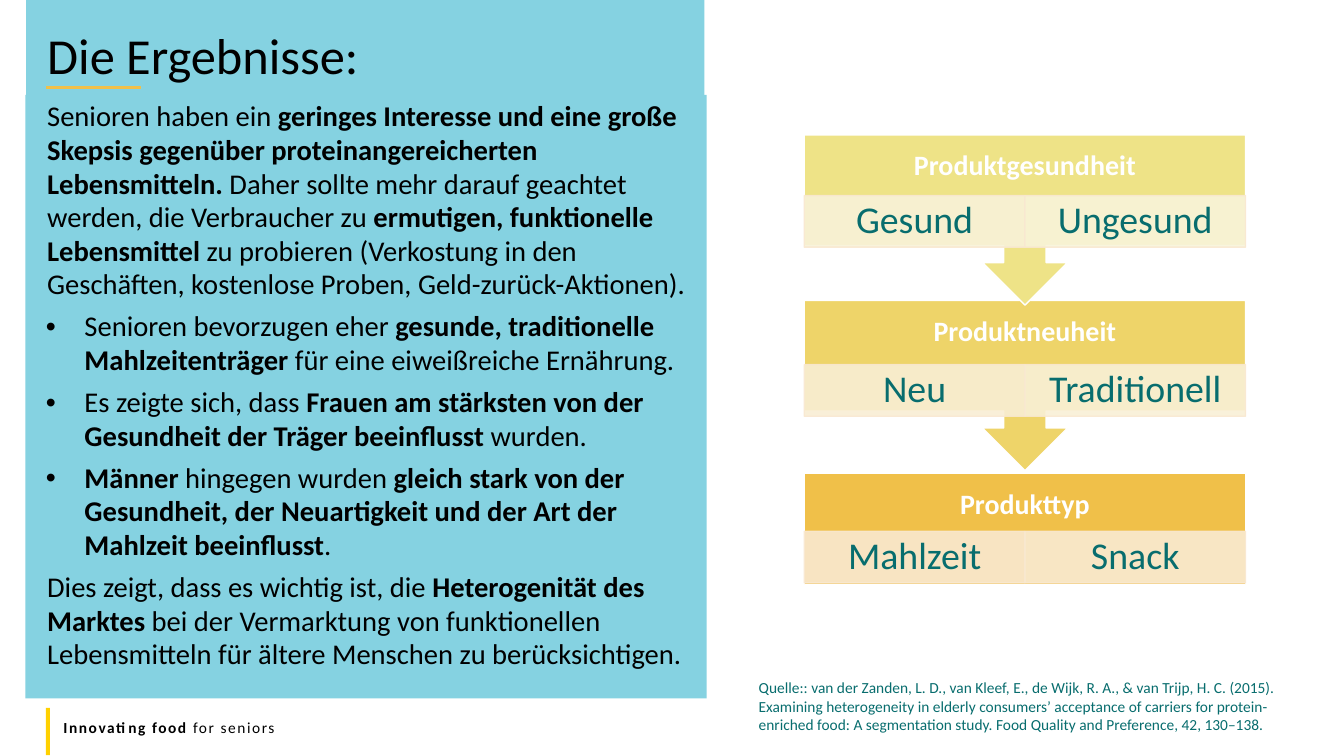
from lxml import etree
from pptx import Presentation
from pptx import util as u
from pptx.dml.color import RGBColor
from pptx.enum import shapes, text
from pptx.oxml.ns import qn

Cm, Pt = u.Cm, u.Pt
LEFT, CENTER = text.PP_ALIGN.LEFT, text.PP_ALIGN.CENTER
TOP, MIDDLE = text.MSO_ANCHOR.TOP, text.MSO_ANCHOR.MIDDLE
RECT = shapes.MSO_SHAPE.RECTANGLE

prs = Presentation()
prs.slide_width, prs.slide_height = Cm(33.87), Cm(19.05)
s = prs.slides.add_slide(prs.slide_layouts[5])


def write(sp, content, size, color="000000", align=LEFT, anchor=TOP,
          insets=(0.25, 0.13), spacing=None, before=0, tracking=None):
    """Fill a shape with text; *...* is bold, a leading • makes a bullet,
    and a leading > indents the paragraph."""
    tf = sp.text_frame
    tf.word_wrap, tf.auto_size = True, text.MSO_AUTO_SIZE.NONE
    tf.vertical_anchor = anchor
    tf.margin_left = tf.margin_right = Cm(insets[0])
    tf.margin_top = tf.margin_bottom = Cm(insets[1])
    for i, line in enumerate(content.split("\n")):
        p = tf.paragraphs[0] if i == 0 else tf.add_paragraph()
        p.alignment, p.line_spacing = align, spacing
        p.space_before = Pt(before if i else 0)
        pPr = p._p.get_or_add_pPr()
        if line[0] == "•":
            pPr.set("marL", str(Cm(1.24)))
            pPr.set("indent", str(Cm(-0.97)))
            etree.SubElement(pPr, qn("a:buFont")).set("typeface", "Arial")
            etree.SubElement(pPr, qn("a:buChar")).set("char", "•")
        elif line[0] == ">":
            pPr.set("marL", str(Cm(0.3)))
            pPr.set("indent", "0")
        for k, part in enumerate(line.lstrip("•>").split("*")):
            if part:
                r = p.add_run()
                r.text = part
                r.font.name, r.font.size, r.font.bold = "Calibri", Pt(size), k % 2 == 1
                r.font.color.rgb = RGBColor.from_string(color)
                if tracking:
                    r.font._element.set("spc", str(tracking))


def box(kind, x, y, w, h, fill, line=None, alpha=None):
    sp = s.shapes.add_shape(kind, Cm(x), Cm(y), Cm(w), Cm(h))
    sp.shadow.inherit = False
    sp.fill.solid()
    sp.fill.fore_color.rgb = RGBColor.from_string(fill)
    if line:
        sp.line.color.rgb = RGBColor.from_string(line)
        sp.line.width = Pt(1)
    else:
        sp.line.fill.background()
    if alpha:
        for clr in sp._element.spPr.iter(qn("a:srgbClr")):
            etree.SubElement(clr, qn("a:alpha")).set("val", str(alpha * 1000))
    return sp


# Blue panel and footer
box(RECT, 0.66, 0, 17.09, 16.46, "85D2E1")
footer = s.shapes.add_textbox(Cm(1.35), Cm(17.96), Cm(30.48), Cm(0.74))
write(footer, "*Innovating food *for seniors", 11, tracking=110)
box(RECT, 1.16, 17.84, 0.1, 1.19, "FFD100")

# Findings
findings = box(RECT, 0.64, 2.39, 17.17, 15.21, "85D2E1")
write(findings, "\n".join([
    ">Senioren haben ein *geringes Interesse und eine große Skepsis gegenüber "
    "proteinangereicherten Lebensmitteln. *Daher sollte mehr darauf geachtet werden, "
    "die Verbraucher zu *ermutigen, funktionelle Lebensmittel *zu probieren (Verkostung "
    "in den Geschäften, kostenlose Proben, Geld-zurück-Aktionen).",
    "•Senioren bevorzugen eher *gesunde, traditionelle Mahlzeitenträger* für eine "
    "eiweißreiche Ernährung.",
    "•Es zeigte sich, dass *Frauen am stärksten von der Gesundheit der Träger "
    "beeinflusst *wurden.",
    "•*Männer *hingegen wurden *gleich stark von der Gesundheit, der Neuartigkeit und "
    "der Art der Mahlzeit beeinflusst*.",
    ">Dies zeigt, dass es wichtig ist, die *Heterogenität des Marktes *bei der Vermarktung "
    "von funktionellen Lebensmitteln für ältere Menschen zu berücksichtigen.",
]), 20.4, spacing=0.98, before=6)

# Title, brought in front of the panel
title = s.shapes.title
title.left, title.top, title.width, title.height = Cm(0.94), Cm(0.76), Cm(14.12), Cm(1.63)
write(title, "Die Ergebnisse:", 36, spacing=0.8)
s.shapes._spTree.append(title._element)

# Product steps, from the bottom up so that each arrow tip lies on the next step
CALLOUT = shapes.MSO_SHAPE.DOWN_ARROW_CALLOUT
steps = [
    ("Produkttyp", RECT, 11.94, 2.79, "F0C049", 13.39,
     [("Mahlzeit", "F9E8D0"), ("Snack", "F9EBD2")]),
    ("Produktneuheit", CALLOUT, 7.57, 4.29, "EED469", 9.19,
     [("Neu", "F9EED4"), ("Traditionell", "F9F0D6")]),
    ("Produktgesundheit", CALLOUT, 3.4, 4.29, "EEE387", 4.93,
     [("Gesund", "F8F2D8"), ("Ungesund", "F8F4DA")]),
]
STEP_X, CELL_W = 20.27, 5.56
for name, kind, y, h, fill, cell_y, cells in steps:
    step = box(kind, STEP_X, y, 2 * CELL_W, h, fill, "FFFFFF")
    write(step, f"*{name}*", 20, "FFFFFF", CENTER, insets=(0.41, 0.32))
    for col, (label, tint) in enumerate(cells):
        cell = box(RECT, STEP_X + col * CELL_W, cell_y, CELL_W, 1.3, tint, "F9E8D0", 90)
        write(cell, label, 27, "086D6E", CENTER, MIDDLE, (0.53, 0.1), 0.9)

# Source
source = s.shapes.add_textbox(Cm(18.87), Cm(16.97), Cm(14.55), Cm(1.68))
write(source, "Quelle:: van der Zanden, L. D., van Kleef, E., de Wijk, R. A., & van Trijp, "
      "H. C. (2015). Examining heterogeneity in elderly consumers’ acceptance of carriers "
      "for protein-enriched food: A segmentation study. Food Quality and Preference, 42, "
      "130–138.", 11, "086D6E")

# Title underline
rule = s.shapes.add_connector(shapes.MSO_CONNECTOR.STRAIGHT,
                              Cm(1.17), Cm(2.21), Cm(3.56), Cm(2.21))
rule.line.color.rgb = RGBColor.from_string("F0C049")
rule.line.width = Pt(2.25)
etree.SubElement(rule._element.spPr, qn("a:effectLst"))

prs.save("out.pptx")
